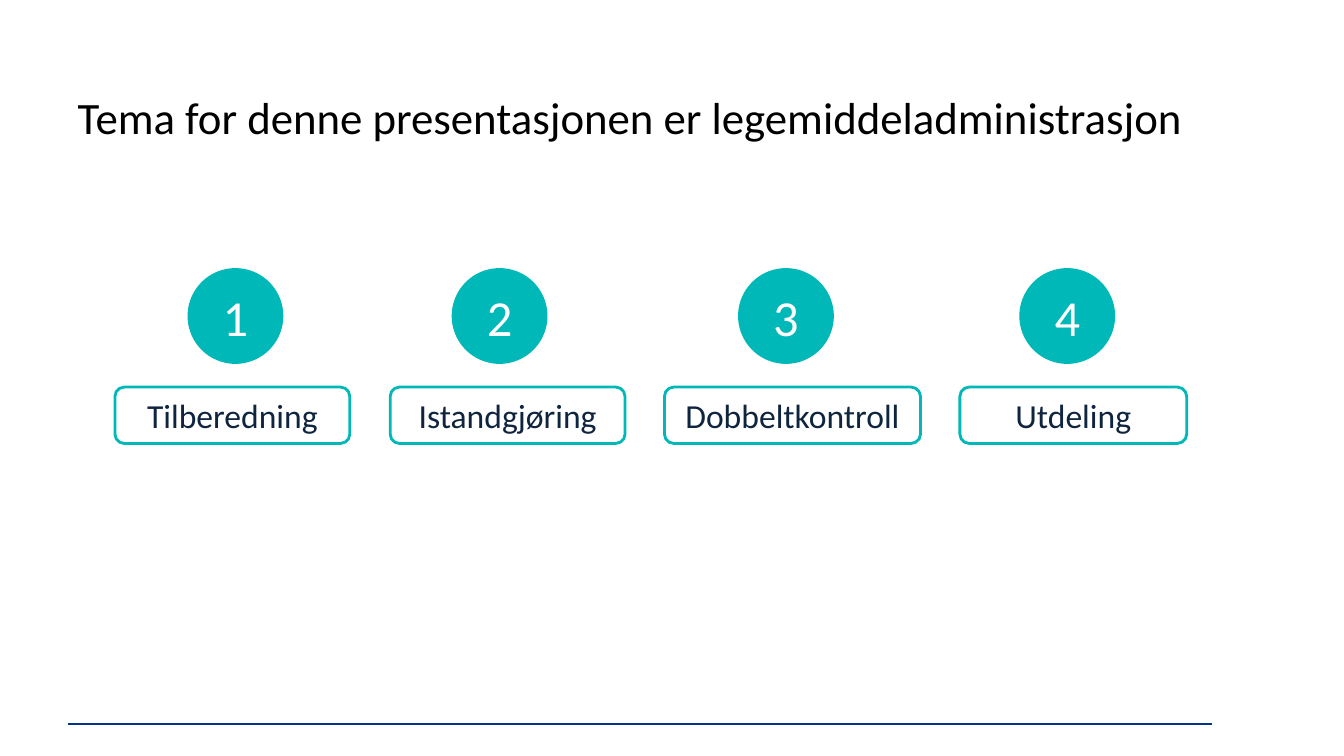
import pptx
import pptx.util
import pptx.dml.color
import pptx.enum.shapes
import pptx.enum.text
import pptx.oxml.ns
import lxml.etree

Inches = pptx.util.Inches
Shape = pptx.enum.shapes.MSO_SHAPE
Align = pptx.enum.text.PP_ALIGN
Anchor = pptx.enum.text.MSO_ANCHOR

COLORS = {"teal": "00B8B7", "navy": "0F243E", "rule": "043585",
          "white": "FFFFFF", "black": "000000"}


def rgb(name):
    return pptx.dml.color.RGBColor.from_string(COLORS[name])


def write(box, text, size, color, align, anchor):
    """Put one formatted line of text in a shape."""
    frame = box.text_frame
    frame.text = text
    frame.word_wrap = True
    frame.vertical_anchor = anchor
    para = frame.paragraphs[0]
    para.alignment = align
    span = para.runs[0]
    span.font.name = "Calibri"
    span.font.size = pptx.util.Pt(size)
    span.font.color.rgb = rgb(color)


deck = pptx.Presentation()
deck.slide_width = Inches(13.33)
deck.slide_height = Inches(7.5)
page = deck.slides.add_slide(deck.slide_layouts[5])
shapes = page.shapes

# Footer rule
rule = shapes.add_connector(pptx.enum.shapes.MSO_CONNECTOR.STRAIGHT,
                            Inches(0.67), Inches(7.18), Inches(12.02), Inches(7.18))
rule.line.color.rgb = rgb("rule")
rule.line.width = pptx.util.Pt(1.25)
lxml.etree.SubElement(rule._element.spPr, pptx.oxml.ns.qn("a:effectLst"))

# Title
title = shapes.title
title.left, title.top = Inches(0.67), Inches(0.8)
title.width, title.height = Inches(11.2), Inches(0.78)
write(title, "Tema for denne presentasjonen er legemiddeladministrasjon",
      32, "black", Align.LEFT, Anchor.MIDDLE)
title.text_frame.auto_size = pptx.enum.text.MSO_AUTO_SIZE.NONE
title.text_frame.paragraphs[0].line_spacing = 0.9

# Numbered topics: label, label left, label width, circle left
topics = [
    ("Tilberedning", 1.14, 2.33, 1.86),
    ("Istandgjøring", 3.87, 2.33, 4.48),
    ("Dobbeltkontroll", 6.59, 2.54, 7.32),
    ("Utdeling", 9.52, 2.25, 10.11),
]
for number, (topic, left, width, circle_left) in enumerate(topics, start=1):
    label = shapes.add_shape(Shape.ROUNDED_RECTANGLE, Inches(left), Inches(3.84),
                             Inches(width), Inches(0.56))
    label.shadow.inherit = False
    label.fill.solid()
    label.fill.fore_color.rgb = rgb("white")
    label.line.color.rgb = rgb("teal")
    label.line.width = pptx.util.Pt(2)
    write(label, topic, 24, "navy", Align.CENTER, Anchor.MIDDLE)

    circle = shapes.add_shape(Shape.OVAL, Inches(circle_left), Inches(2.66),
                              Inches(0.95), Inches(0.95))
    circle.shadow.inherit = False
    circle.fill.solid()
    circle.fill.fore_color.rgb = rgb("teal")
    circle.line.fill.background()

    digit = shapes.add_textbox(Inches(circle_left - 0.02), Inches(2.79),
                               Inches(0.99), Inches(0.71))
    write(digit, str(number), 36, "white", Align.CENTER, Anchor.TOP)

deck.save("out.pptx")
